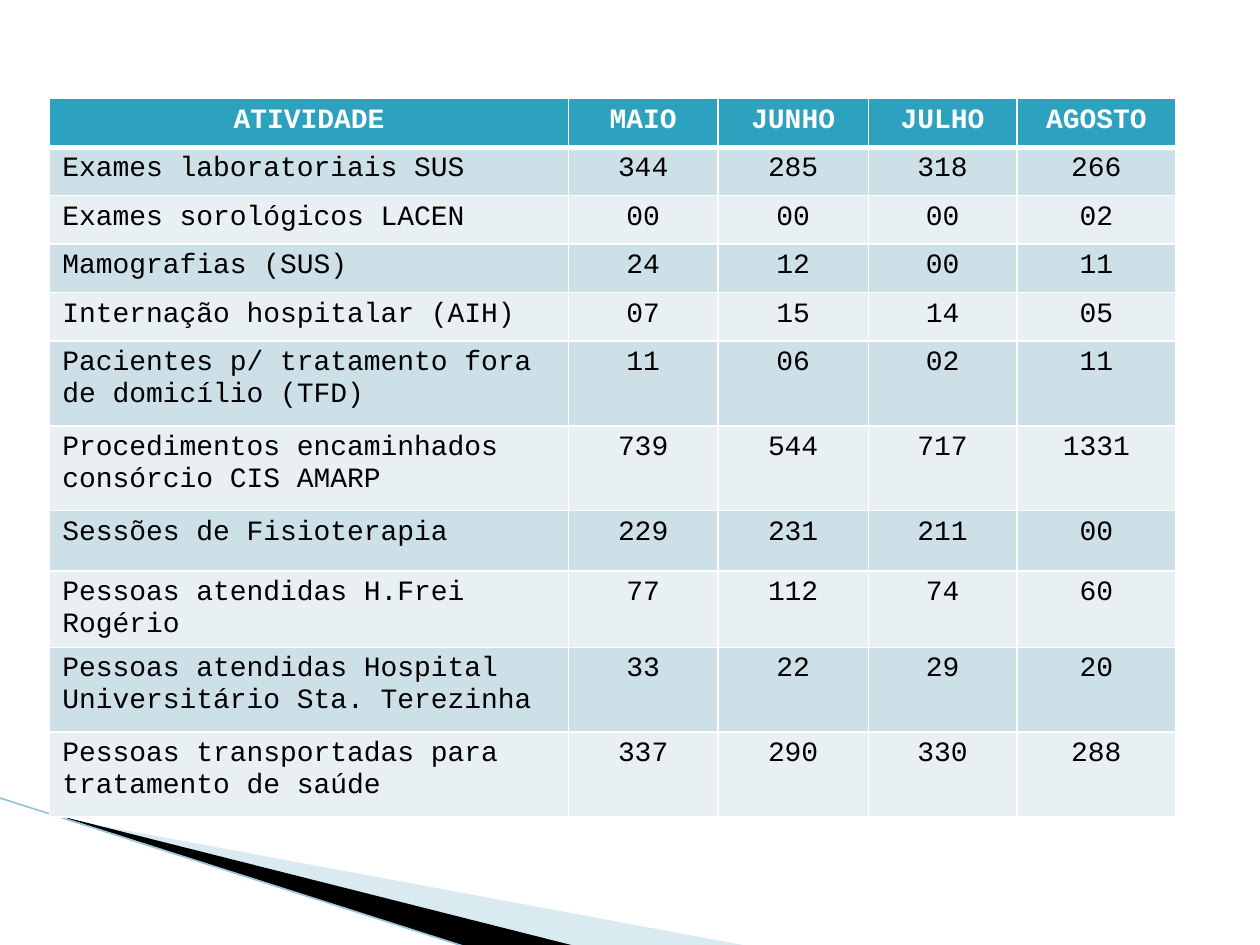
from dataclasses import dataclass

from lxml import etree
from pptx import Presentation
from pptx.dml.color import RGBColor
from pptx.enum.shapes import MSO_CONNECTOR
from pptx.enum.text import PP_ALIGN
from pptx.oxml.ns import qn
from pptx.util import Pt

LEFT, CENTER = PP_ALIGN.LEFT, PP_ALIGN.CENTER
STRAIGHT = MSO_CONNECTOR.STRAIGHT


@dataclass(frozen=True)
class Theme:
    font: str = "Courier New"
    size: float = 16
    head: str = "2DA2BF"
    bands: tuple = ("CDE0E8", "E8F0F4")
    white: str = "FFFFFF"
    black: str = "000000"
    wedge: str = "A0CBDC"
    line: str = "97C5D8"
    thin: float = 1
    thick: float = 3


HEADS = ["ATIVIDADE", "MAIO", "JUNHO", "JULHO", "AGOSTO"]
ROWS = [
    ("Exames laboratoriais SUS", "344", "285", "318", "266"),
    ("Exames sorológicos LACEN", "00", "00", "00", "02"),
    ("Mamografias (SUS)", "24", "12", "00", "11"),
    ("Internação hospitalar (AIH)", "07", "15", "14", "05"),
    ("Pacientes p/ tratamento fora de domicílio (TFD)", "11", "06", "02", "11"),
    ("Procedimentos encaminhados consórcio CIS AMARP",
     "739", "544", "717", "1331"),
    ("Sessões de Fisioterapia", "229", "231", "211", "00"),
    ("Pessoas atendidas H.Frei Rogério", "77", "112", "74", "60"),
    ("Pessoas atendidas Hospital Universitário Sta. Terezinha",
     "33", "22", "29", "20"),
    ("Pessoas transportadas para tratamento de saúde",
     "337", "290", "330", "288"),
]
WIDTHS = [296.4, 85.5, 85.9, 84.9, 90.9]
SHORT, TALL = 27.7, 48.5
HEIGHTS = [SHORT] * 5 + [TALL] * 2 + [34.6, 43.2] + [TALL] * 2


def write(frame, text, *, font, size, color, bold=False, align=LEFT):
    para = frame.paragraphs[0]
    para.alignment = align
    run = para.add_run()
    run.text = text
    run.font.name = font
    run.font.size = Pt(size)
    run.font.bold = bold
    run.font.color.rgb = RGBColor.from_string(color)


def paint(fill, color):
    fill.solid()
    fill.fore_color.rgb = RGBColor.from_string(color)


def edge(cell, side, color, width):
    """Draw one border; call before the cell is filled."""
    props = cell._tc.get_or_add_tcPr()
    line = etree.SubElement(props, qn("a:ln" + side), w=str(Pt(width)))
    solid = etree.SubElement(line, qn("a:solidFill"))
    etree.SubElement(solid, qn("a:srgbClr"), val=color)


class Page:
    def __init__(self, slide, theme):
        self.slide, self.theme = slide, theme

    def wedge(self, points, color, alpha=None):
        start, *rest = [(Pt(x), Pt(y)) for x, y in points]
        path = self.slide.shapes.build_freeform(*start)
        path.add_line_segments(rest, close=True)
        shape = path.convert_to_shape()
        shape.shadow.inherit = False
        shape.line.fill.background()
        paint(shape.fill, color)
        if alpha is not None:
            tint = shape._element.spPr.find(".//" + qn("a:srgbClr"))
            etree.SubElement(tint, qn("a:alpha"), val=str(alpha * 1000))

    def line(self, start, end, color, width):
        ends = [Pt(v) for v in (*start, *end)]
        link = self.slide.shapes.add_connector(STRAIGHT, *ends)
        link.line.color.rgb = RGBColor.from_string(color)
        link.line.width = Pt(width)
        etree.SubElement(link._element.spPr, qn("a:effectLst"))

    def table(self, left, top, widths, heights, rows):
        """Place a grid whose first row is the header."""
        grid = self.slide.shapes.add_table(
            len(rows), len(widths), Pt(left), Pt(top),
            Pt(sum(widths)), Pt(sum(heights))).table
        grid.first_row = grid.horz_banding = False
        for col, width in zip(grid.columns, widths):
            col.width = Pt(width)
        for row, height in zip(grid.rows, heights):
            row.height = Pt(height)
        for r, texts in enumerate(rows):
            for c, text in enumerate(texts):
                self.cell(grid.cell(r, c), text, r, c)

    def cell(self, cell, text, row, col):
        look = self.theme
        head = row == 0
        heavy = {(0, "B"), (1, "T")}
        for side in "LRTB":
            width = look.thick if (row, side) in heavy else look.thin
            edge(cell, side, look.white, width)
        paint(cell.fill, look.head if head else look.bands[(row - 1) % 2])
        write(cell.text_frame, text, font=look.font, size=look.size, bold=head,
              color=look.white if head else look.black,
              align=CENTER if head or col else LEFT)


def main():
    deck = Presentation()
    deck.slide_width, deck.slide_height = Pt(720), Pt(540)
    theme = Theme()
    page = Page(deck.slides.add_slide(deck.slide_layouts[6]), theme)
    page.wedge([(39.6, 468.5), (428.4, 540.7), (328.3, 540.7), (39.6, 468)],
               theme.wedge, alpha=40)
    page.wedge([(38.2, 467.3), (329, 540.7), (267.8, 541.4), (38.9, 468)],
               theme.black)
    page.line((-0.7, 455.8), (267.1, 541.4), theme.line, 0.95)
    page.table(28.4, 56.4, WIDTHS, HEIGHTS, [HEADS, *ROWS])
    deck.save("out.pptx")


if __name__ == "__main__":
    main()
